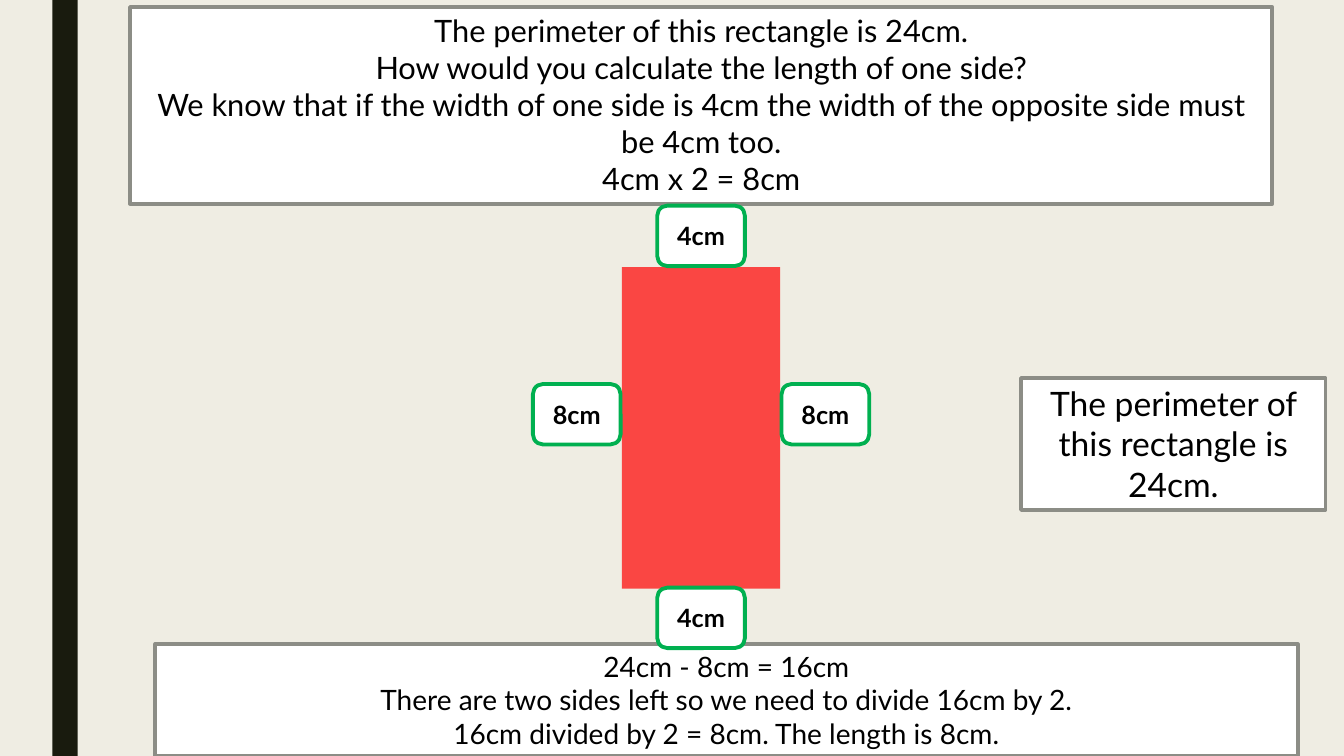
from dataclasses import dataclass

from lxml.etree import SubElement
from pptx import Presentation
from pptx.dml.color import RGBColor
from pptx.enum.shapes import MSO_SHAPE as Preset
from pptx.enum.text import MSO_ANCHOR as Anchor, MSO_AUTO_SIZE as AutoSize, PP_ALIGN as Align
from pptx.oxml.ns import qn
from pptx.util import Inches, Pt

SLIDE_WIDTH, SLIDE_HEIGHT = Inches(13.33), Inches(7.5)
COLUMNS, ROWS = 40, 30


@dataclass(frozen=True)
class Theme:
    background: str = "EFEDE3"
    band: str = "191B0E"
    panel: str = "FFFFFF"
    panel_line: str = "8C8D86"
    label_line: str = "00B050"
    rectangle: str = "FF0000"
    text: str = "000000"
    font: str = "Lato"
    question_size: int = 22
    fact_size: int = 24
    working_size: int = 20
    label_size: int = 18
    line_width: float = 2.75


THEME = Theme()


@dataclass(frozen=True)
class Box:
    column: float
    row: float
    columns: float
    rows: float

    def lengths(self):
        across, down = SLIDE_WIDTH / COLUMNS, SLIDE_HEIGHT / ROWS
        return (round(self.column * across), round(self.row * down),
                round(self.columns * across), round(self.rows * down))


BAND = Box(1.56, 0, 0.75, ROWS)
QUESTION = Box(3.87, 0.28, 34, 7.8)
RECTANGLE = Box(18.51, 10.6, 4.71, 12.76)
FACT = Box(30.39, 15, 9.06, 5.24)
WORKING = Box(4.62, 25.56, 34, 4.44)
LABEL_COLUMNS, LABEL_ROWS = 2.61, 2.4


def color(value):
    return RGBColor.from_string(value)


def add_block(slide, box, fill, preset=Preset.RECTANGLE):
    shape = slide.shapes.add_shape(preset, *box.lengths())
    shape.shadow.inherit = False
    shape.fill.solid()
    shape.fill.fore_color.rgb = color(fill)
    shape.line.fill.background()
    return shape


def outline(shape, line):
    shape.line.color.rgb = color(line)
    shape.line.width = Pt(THEME.line_width)


def write(shape, lines, size, bold=False, margin=None):
    frame = shape.text_frame
    frame.word_wrap = True
    frame.auto_size = AutoSize.SHAPE_TO_FIT_TEXT
    frame.vertical_anchor = Anchor.TOP
    if margin is not None:
        frame.margin_left = frame.margin_right = margin
        frame.margin_top = frame.margin_bottom = margin
    frame.text = "\n".join(lines)
    for paragraph in frame.paragraphs:
        paragraph.alignment = Align.CENTER
        paragraph.font.name = THEME.font
        paragraph.font.size = Pt(size)
        paragraph.font.bold = bold
        paragraph.font.color.rgb = color(THEME.text)


def fill_title(slide, box, lines):
    title = slide.shapes.title
    title.left, title.top, title.width, title.height = box.lengths()
    title.fill.solid()
    title.fill.fore_color.rgb = color(THEME.panel)
    outline(title, THEME.panel_line)
    write(title, lines, THEME.question_size)


def add_panel(slide, box, lines, size):
    panel = add_block(slide, box, THEME.panel)
    outline(panel, THEME.panel_line)
    write(panel, lines, size)


def add_label(slide, column, row, text):
    box = Box(column, row, LABEL_COLUMNS, LABEL_ROWS)
    label = add_block(slide, box, THEME.panel, Preset.ROUNDED_RECTANGLE)
    outline(label, THEME.label_line)
    write(label, [text], THEME.label_size, bold=True, margin=Inches(0.12))


def add_measured_rectangle(slide, box, width_text, length_text):
    shape = add_block(slide, box, THEME.rectangle)
    fill_color = shape.fill._xPr.find(qn("a:solidFill"))[0]
    SubElement(fill_color, qn("a:alpha"), val="70000")

    middle_column = box.column + (box.columns - LABEL_COLUMNS) / 2
    for row in (box.row - LABEL_ROWS, box.row + box.rows):
        add_label(slide, middle_column, row - 0.04, width_text)
    for column in (box.column - LABEL_COLUMNS - 0.04, box.column + box.columns + 0.04):
        add_label(slide, column, FACT.row + 0.24, length_text)


def main():
    presentation = Presentation()
    presentation.slide_width, presentation.slide_height = SLIDE_WIDTH, SLIDE_HEIGHT
    slide = presentation.slides.add_slide(presentation.slide_layouts.get_by_name("Title Only"))
    slide.background.fill.solid()
    slide.background.fill.fore_color.rgb = color(THEME.background)

    add_block(slide, BAND, THEME.band)
    fill_title(slide, QUESTION, [
        "The perimeter of this rectangle is 24cm.",
        "How would you calculate the length of one side?",
        "We know that if the width of one side is 4cm the width of the opposite side must be 4cm too.",
        "4cm x 2 = 8cm",
    ])
    add_panel(slide, FACT, ["The perimeter of this rectangle is 24cm."], THEME.fact_size)
    add_panel(slide, WORKING, [
        "24cm - 8cm = 16cm",
        "There are two sides left so we need to divide 16cm by 2.",
        "16cm divided by 2 = 8cm. The length is 8cm.",
    ], THEME.working_size)
    add_measured_rectangle(slide, RECTANGLE, "4cm", "8cm")
    presentation.save("out.pptx")


if __name__ == "__main__":
    main()
